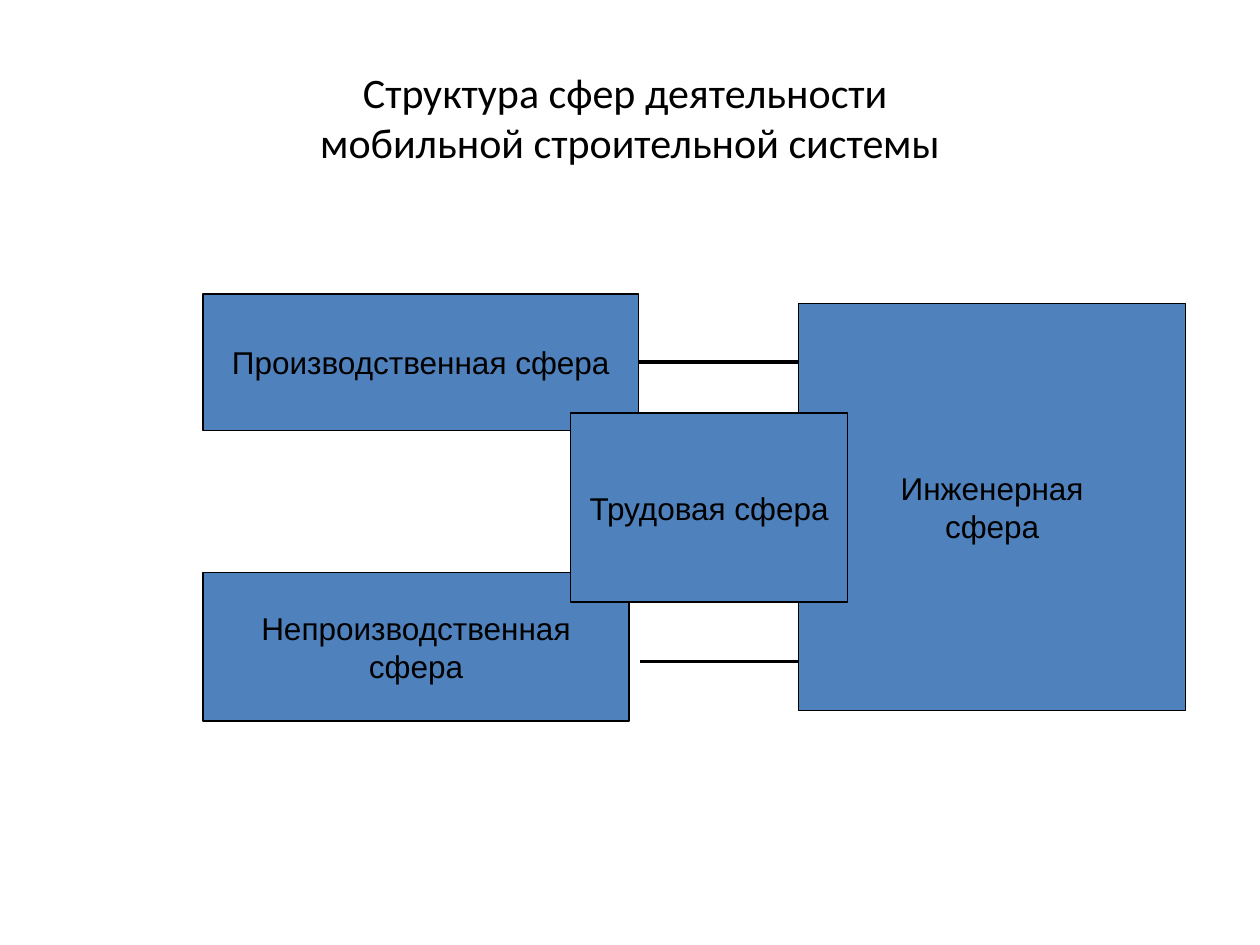
import dataclasses

import pptx
import pptx.dml.color
import pptx.enum.shapes
import pptx.enum.text
import pptx.oxml.ns
import pptx.util
import lxml.etree

Pt = pptx.util.Pt
RIGHT_SIDE = 3


@dataclasses.dataclass(frozen=True)
class Theme:
    ink: str = "000000"
    sphere_fill: str = "4F81BD"
    title_font: str = "Calibri"
    label_font: str = "Arial"
    title_size: float = 24
    label_size: float = 18
    outline: float = 0.75
    link_width: float = 2.25


class SlideBuilder:
    def __init__(self, page, theme):
        self.page = page
        self.theme = theme

    def color(self, value):
        return pptx.dml.color.RGBColor.from_string(value)

    def set_text(self, box, lines, font_name, size, wrap):
        frame = box.text_frame
        frame.word_wrap = wrap
        frame.vertical_anchor = pptx.enum.text.MSO_ANCHOR.MIDDLE
        formats = {"name": font_name, "size": Pt(size)}
        for index, line in enumerate(lines):
            para = frame.add_paragraph() if index else frame.paragraphs[0]
            para.text = line
            para.alignment = pptx.enum.text.PP_ALIGN.CENTER
            for span in para.runs:
                for key, value in formats.items():
                    setattr(span.font, key, value)
                span.font.color.rgb = self.color(self.theme.ink)

    def title(self, text, left, top, width, height):
        box = self.page.shapes.add_textbox(Pt(left), Pt(top), Pt(width), Pt(height))
        self.set_text(box, [text], self.theme.title_font, self.theme.title_size, True)

    def sphere(self, lines, left, top, width, height):
        box = self.page.shapes.add_shape(
            pptx.enum.shapes.MSO_SHAPE.RECTANGLE,
            Pt(left), Pt(top), Pt(width), Pt(height))
        box.shadow.inherit = False
        box.fill.solid()
        box.fill.fore_color.rgb = self.color(self.theme.sphere_fill)
        box.line.color.rgb = self.color(self.theme.ink)
        box.line.width = Pt(self.theme.outline)
        self.set_text(box, lines, self.theme.label_font, self.theme.label_size, False)
        return box

    def link(self, start, end, y, source=None):
        line = self.page.shapes.add_connector(
            pptx.enum.shapes.MSO_CONNECTOR.STRAIGHT, Pt(start), Pt(y), Pt(end), Pt(y))
        if source is not None:
            line.begin_connect(source, RIGHT_SIDE)
        line.line.color.rgb = self.color(self.theme.ink)
        line.line.width = Pt(self.theme.link_width)
        lxml.etree.SubElement(line._element.spPr, pptx.oxml.ns.qn("a:effectLst"))


def main():
    deck = pptx.Presentation()
    deck.slide_width, deck.slide_height = Pt(720), Pt(540)
    page = deck.slides.add_slide(deck.slide_layouts[6])
    builder = SlideBuilder(page, Theme())

    # Heading
    builder.title("Структура сфер деятельности \vмобильной строительной системы",
                  36, 21.6, 648, 90)

    # Spheres of activity, the labour sphere overlapping the other three
    production = builder.sphere(["Производственная сфера"], 116, 168, 249, 78)
    builder.sphere(["Непроизводственная", "сфера"], 116, 327, 243.5, 85)
    builder.sphere(["Инженерная", "сфера"], 456.5, 173.5, 221, 232.5)
    builder.sphere(["Трудовая сфера"], 326, 236, 158.5, 108)

    # Links to the engineering sphere
    builder.link(365, 456.5, 207, source=production)
    builder.link(365.5, 456.5, 378)

    deck.save("out.pptx")


if __name__ == "__main__":
    main()
